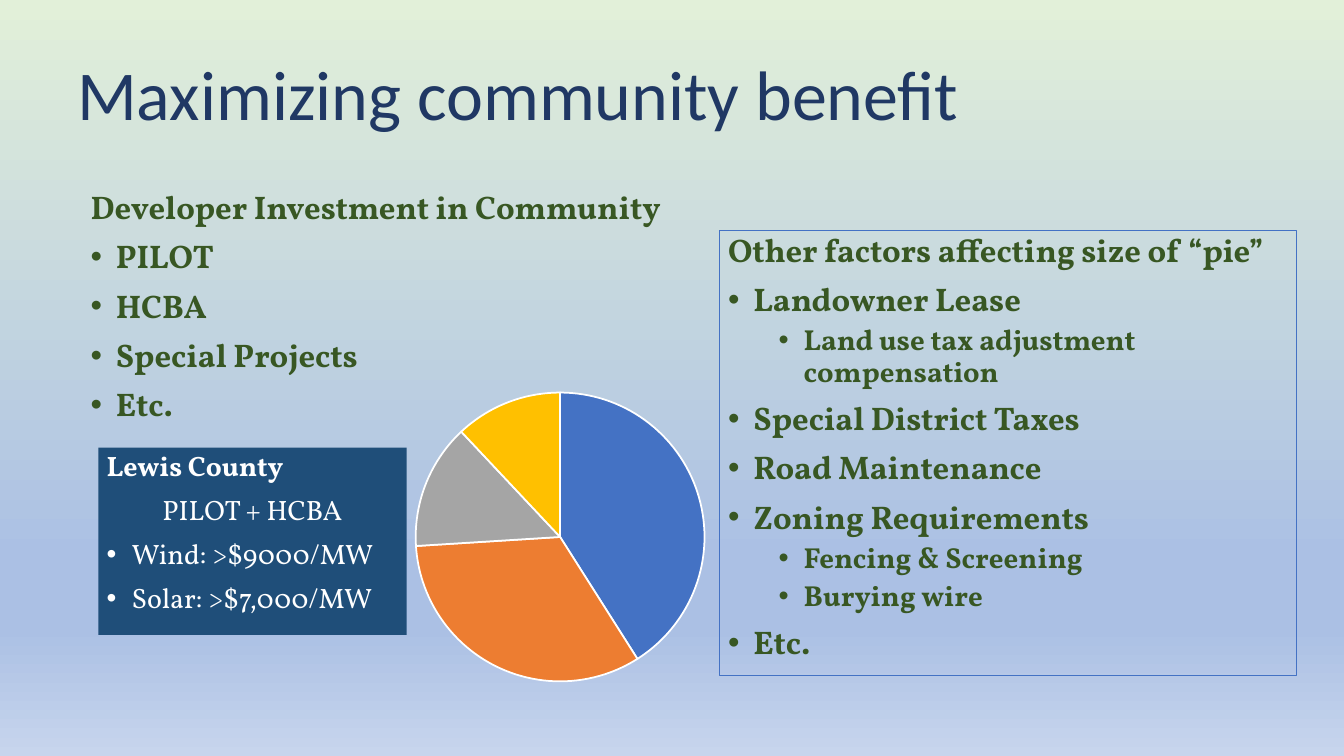
from lxml.etree import SubElement, fromstring
from pptx import Presentation
from pptx.chart.data import CategoryChartData
from pptx.dml.color import RGBColor
from pptx.enum.chart import XL_CHART_TYPE
from pptx.enum.shapes import MSO_SHAPE
from pptx.enum.text import MSO_ANCHOR, PP_ALIGN
from pptx.oxml.ns import nsdecls, qn
from pptx.util import Inches, Pt

NAVY, GREEN, WHITE = "203864", "385723", "FFFFFF"
SLICES = [(41, "4472C4"), (33, "ED7D31"), (14, "A5A5A5"), (12, "FFC000")]
SKY = [(0, "E2F0D9"), (74, "ABC0E4"), (83, "ABC0E4"), (100, "C7D5ED")]
INVEST = [
    ("head", "Developer Investment in Community"),
    ("item", "PILOT"),
    ("item", "HCBA"),
    ("item", "Special Projects"),
    ("item", "Etc."),
]
FACTORS = [
    ("head", "Other factors affecting size of “pie”"),
    ("item", "Landowner Lease"),
    ("sub", "Land use tax adjustment compensation"),
    ("item", "Special District Taxes"),
    ("item", "Road Maintenance"),
    ("item", "Zoning Requirements"),
    ("sub", "Fencing & Screening"),
    ("sub", "Burying wire"),
    ("item", "Etc."),
]
COUNTY = [
    ("head", "Lewis County"),
    ("mid", "PILOT + HCBA"),
    ("item", "Wind: >$9000/MW"),
    ("item", "Solar: >$7,000/MW"),
]


def color(code):
    """Turn a hex string into a colour."""
    return RGBColor.from_string(code)


def bullet(para, left):
    """Give a paragraph a hanging bullet."""
    props = para._p.get_or_add_pPr()
    props.set("marL", str(Inches(left)))
    props.set("indent", str(Inches(-0.3)))
    SubElement(props, qn("a:buFont"), typeface="Arial")
    SubElement(props, qn("a:buChar"), char="•")


def write(shape, lines, size, ink, face="Vollkorn", bold=True):
    """Fill a shape with headed, bulleted lines; bold covers the items."""
    frame = shape.text_frame
    frame.word_wrap = True
    frame.vertical_anchor = MSO_ANCHOR.TOP
    for n, (kind, text) in enumerate(lines):
        para = frame.paragraphs[0] if n == 0 else frame.add_paragraph()
        sub = kind == "sub"
        if sub:
            para.level = 1
        if kind in ("item", "sub"):
            bullet(para, 0.9 if sub else 0.3)
        para.alignment = PP_ALIGN.CENTER if kind == "mid" else PP_ALIGN.LEFT
        para.line_spacing = 0.9
        if n:
            para.space_before = Pt(6 if sub else 12)
        run = para.add_run()
        run.text = text
        font = run.font
        font.name, font.size = face, Pt(24.8 if sub else size)
        font.bold = bold or kind == "head"
        font.color.rgb = color(ink)


def paint(slide):
    """Lay the vertical gradient behind the slide."""
    fill = slide.background.fill
    fill.gradient()
    grad = slide._element.find(".//" + qn("a:gradFill"))
    for part in list(grad):
        grad.remove(part)
    stops = SubElement(grad, qn("a:gsLst"))
    for place, code in SKY:
        stop = SubElement(stops, qn("a:gs"), pos=str(place * 1000))
        SubElement(stop, qn("a:srgbClr"), val=code)
    SubElement(grad, qn("a:lin"), ang="5400000", scaled="0")


def title(slide, box):
    """Set the slide title."""
    shape = slide.shapes.add_textbox(*map(Inches, box))
    write(shape, [("title", "Maximizing community benefit")], 60, NAVY,
          "Calibri", False)


def invest(slide, box):
    """List the developer investments."""
    write(slide.shapes.add_textbox(*map(Inches, box)), INVEST, 28, GREEN)


def panel(slide, box, fill=None, line=None):
    """Draw a flat rectangle and return it."""
    shape = slide.shapes.add_shape(MSO_SHAPE.RECTANGLE, *map(Inches, box))
    shape.shadow.inherit = False
    if fill:
        shape.fill.solid()
        shape.fill.fore_color.rgb = color(fill)
    else:
        shape.fill.background()
    if line:
        shape.line.color.rgb = color(line)
        shape.line.width = Pt(0.75)
    else:
        shape.line.fill.background()
    return shape


def factors(slide, box):
    """List the other factors in an outlined panel."""
    write(panel(slide, box, line="4472C4"), FACTORS, 28, GREEN)


def county(slide, box):
    """Show the county rates in a dark panel."""
    write(panel(slide, box, fill="1F4E79"), COUNTY, 24, WHITE, bold=False)


def pie(slide, box):
    """Draw the pie, centred in its box."""
    data = CategoryChartData()
    data.categories = [str(n + 1) for n in range(len(SLICES))]
    data.add_series("Series 1", [value for value, _ in SLICES])
    chart = slide.shapes.add_chart(
        XL_CHART_TYPE.PIE, *map(Inches, box), data).chart
    chart.has_legend = chart.has_title = False
    chart.font.name, chart.font.size = "Calibri", Pt(10)
    chart.font.color.rgb = color("000000")
    plot = chart.plots[0]
    plot.vary_by_categories = True
    for n, (_, code) in enumerate(SLICES):
        look = plot.series[0].points[n].format
        look.fill.solid()
        look.fill.fore_color.rgb = color(code)
        look.line.color.rgb = color(WHITE)
        look.line.width = Pt(1.5)
    wide, high = (3.44 / side for side in box[2:])
    spots = {"x": (1 - wide) / 2, "y": (1 - high) / 2, "w": wide, "h": high}
    rules = '<c:layoutTarget val="inner"/>'
    rules += '<c:xMode val="edge"/><c:yMode val="edge"/>'
    rules += "".join(f'<c:{k} val="{v:.3f}"/>' for k, v in spots.items())
    area = chart._chartSpace.find(".//" + qn("c:plotArea"))
    for old in area.findall(qn("c:layout")):
        area.remove(old)
    area.insert(0, fromstring(
        f'<c:layout {nsdecls("c")}><c:manualLayout>{rules}'
        "</c:manualLayout></c:layout>"))


def main():
    """Build the slide and save it."""
    deck = Presentation()
    deck.slide_width, deck.slide_height = Inches(16), Inches(9)
    slide = deck.slides.add_slide(deck.slide_layouts[6])
    paint(slide)
    title(slide, (0.82, 0.67, 14.36, 1.5))
    invest(slide, (0.98, 2.23, 7.18, 3.1))
    pie(slide, (4.77, 4.54, 3.8, 3.71))
    factors(slide, (8.57, 2.74, 6.86, 5.3))
    county(slide, (1.17, 5.33, 3.67, 2.23))
    deck.save("out.pptx")


if __name__ == "__main__":
    main()
